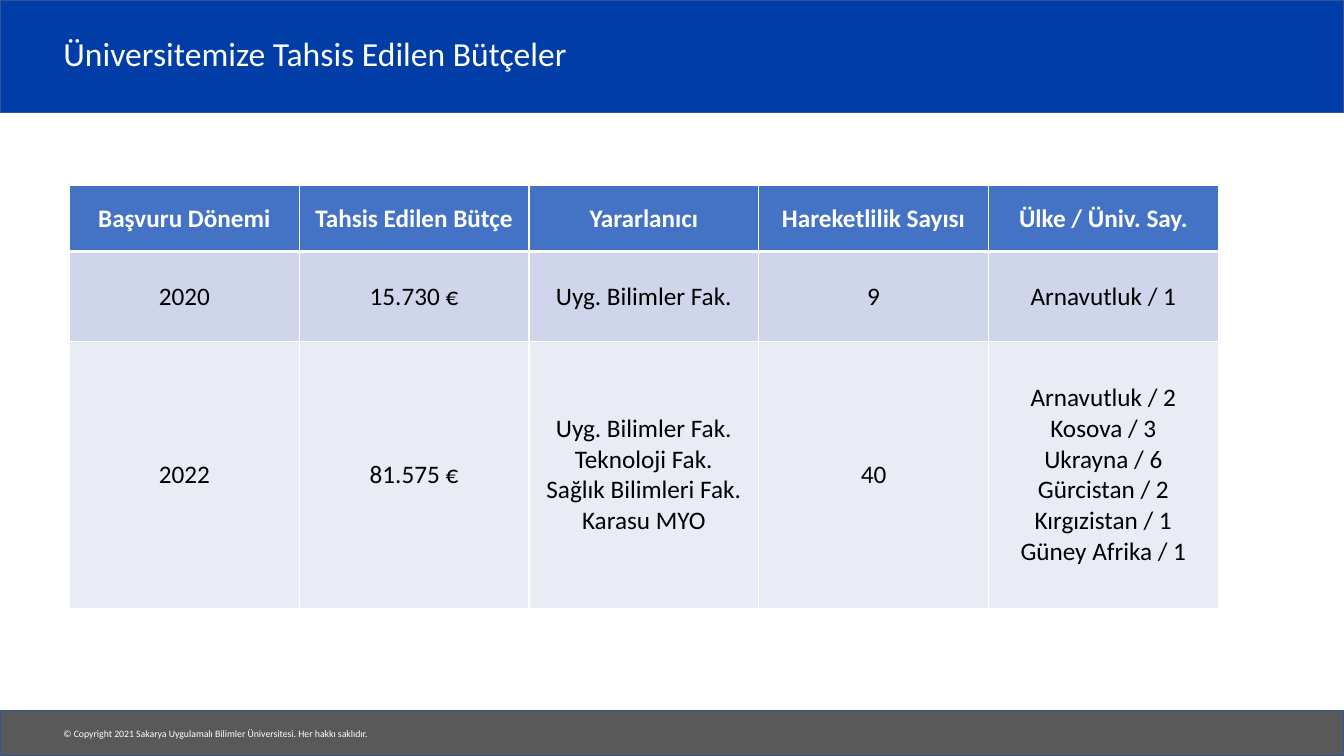
from dataclasses import dataclass

from lxml.etree import SubElement
from pptx import Presentation
from pptx.dml.color import RGBColor
from pptx.enum.shapes import MSO_SHAPE
from pptx.enum.text import MSO_ANCHOR, PP_ALIGN
from pptx.oxml.ns import qn
from pptx.slide import Slide
from pptx.table import _Cell
from pptx.text.text import TextFrame
from pptx.util import Cm, Pt


@dataclass(frozen=True)
class Theme:
    font: str = "Calibri"
    white: str = "FFFFFF"
    black: str = "000000"
    blue: str = "003DA6"
    gray: str = "595959"
    outline: str = "325491"
    header: str = "4472C4"
    title_size: int = 24
    table_size: int = 18
    footer_size: int = 7


@dataclass(frozen=True)
class Band:
    top: float
    height: float
    color: str


@dataclass(frozen=True)
class Label:
    text: str
    left: float
    top: float
    width: float
    height: float
    size: int
    wrap: bool
    anchor: MSO_ANCHOR
    line_spacing: float


@dataclass(frozen=True)
class BudgetRow:
    height: float
    fill: str
    color: str
    bold: bool
    top_border: int
    bottom_border: int
    texts: tuple[str, ...]


THEME = Theme()
SLIDE_WIDTH, SLIDE_HEIGHT = 33.87, 19.05
TABLE_LEFT, TABLE_TOP, COLUMN_WIDTH = 1.75, 4.67, 5.79

BANDS = (
    Band(0, 2.84, THEME.blue),
    Band(17.9, 1.15, THEME.gray),
)
LABELS = (
    Label("© Copyright 2021 Sakarya Uygulamalı Bilimler Üniversitesi. Her hakkı saklıdır.",
          1.35, 18.21, 8.36, 0.56, THEME.footer_size, False, MSO_ANCHOR.TOP, 1.0),
    Label("Üniversitemize Tahsis Edilen Bütçeler",
          1.35, 0.48, 28.02, 1.85, THEME.title_size, True, MSO_ANCHOR.MIDDLE, 0.9),
)
BUDGET_ROWS = (
    BudgetRow(1.67, THEME.header, THEME.white, True, 1, 3, (
        "Başvuru Dönemi", "Tahsis Edilen Bütçe", "Yararlanıcı",
        "Hareketlilik Sayısı", "Ülke / Üniv. Say.")),
    BudgetRow(2.26, "CFD5EA", THEME.black, False, 3, 1, (
        "2020", "15.730 €", "Uyg. Bilimler Fak.", "9", "Arnavutluk / 1")),
    BudgetRow(6.74, "E9EBF5", THEME.black, False, 1, 1, (
        "2022", "81.575 €",
        "Uyg. Bilimler Fak.\nTeknoloji Fak.\nSağlık Bilimleri Fak.\nKarasu MYO",
        "40",
        "Arnavutluk / 2\nKosova / 3\nUkrayna / 6\nGürcistan / 2\n"
        "Kırgızistan / 1\nGüney Afrika / 1")),
)


def format_text(frame: TextFrame, size: int, color: str, bold: bool,
                align: PP_ALIGN, line_spacing: float) -> None:
    for para in frame.paragraphs:
        para.alignment = align
        para.line_spacing = line_spacing
        for span in para.runs:
            span.font.name = THEME.font
            span.font.size = Pt(size)
            span.font.bold = bold
            span.font.color.rgb = RGBColor.from_string(color)


def draw_band(page: Slide, band: Band) -> None:
    shape = page.shapes.add_shape(
        MSO_SHAPE.RECTANGLE, 0, Cm(band.top), Cm(SLIDE_WIDTH), Cm(band.height))
    shape.shadow.inherit = False
    shape.fill.solid()
    shape.fill.fore_color.rgb = RGBColor.from_string(band.color)
    shape.line.color.rgb = RGBColor.from_string(THEME.outline)
    shape.line.width = Pt(1)


def draw_label(page: Slide, label: Label) -> None:
    box = page.shapes.add_textbox(
        Cm(label.left), Cm(label.top), Cm(label.width), Cm(label.height))
    frame = box.text_frame
    frame.word_wrap = label.wrap
    frame.vertical_anchor = label.anchor
    frame.text = label.text
    format_text(frame, label.size, THEME.white, False, PP_ALIGN.LEFT, label.line_spacing)


def set_borders(cell: _Cell, top: int, bottom: int) -> None:
    properties = cell._tc.get_or_add_tcPr()
    for side, width in (("L", 1), ("R", 1), ("T", top), ("B", bottom)):
        border = SubElement(properties, qn(f"a:ln{side}"), w=str(Pt(width)))
        fill = SubElement(border, qn("a:solidFill"))
        SubElement(fill, qn("a:srgbClr"), val=THEME.white)


def fill_cell(cell: _Cell, text: str, row: BudgetRow) -> None:
    set_borders(cell, row.top_border, row.bottom_border)
    cell.fill.solid()
    cell.fill.fore_color.rgb = RGBColor.from_string(row.fill)
    cell.vertical_anchor = MSO_ANCHOR.MIDDLE
    cell.text_frame.text = text
    format_text(cell.text_frame, THEME.table_size, row.color, row.bold, PP_ALIGN.CENTER, 1.0)


def draw_table(page: Slide, rows: tuple[BudgetRow, ...]) -> None:
    column_count = len(rows[0].texts)
    table = page.shapes.add_table(
        len(rows), column_count, Cm(TABLE_LEFT), Cm(TABLE_TOP),
        Cm(COLUMN_WIDTH * column_count), Cm(sum(row.height for row in rows))).table
    for column in table.columns:
        column.width = Cm(COLUMN_WIDTH)
    for row_index, row in enumerate(rows):
        table.rows[row_index].height = Cm(row.height)
        for column_index, text in enumerate(row.texts):
            fill_cell(table.cell(row_index, column_index), text, row)


def main() -> None:
    deck = Presentation()
    deck.slide_width, deck.slide_height = Cm(SLIDE_WIDTH), Cm(SLIDE_HEIGHT)
    page = deck.slides.add_slide(deck.slide_layouts[6])
    for band in BANDS:
        draw_band(page, band)
    for label in LABELS:
        draw_label(page, label)
    draw_table(page, BUDGET_ROWS)
    deck.save("out.pptx")


if __name__ == "__main__":
    main()
